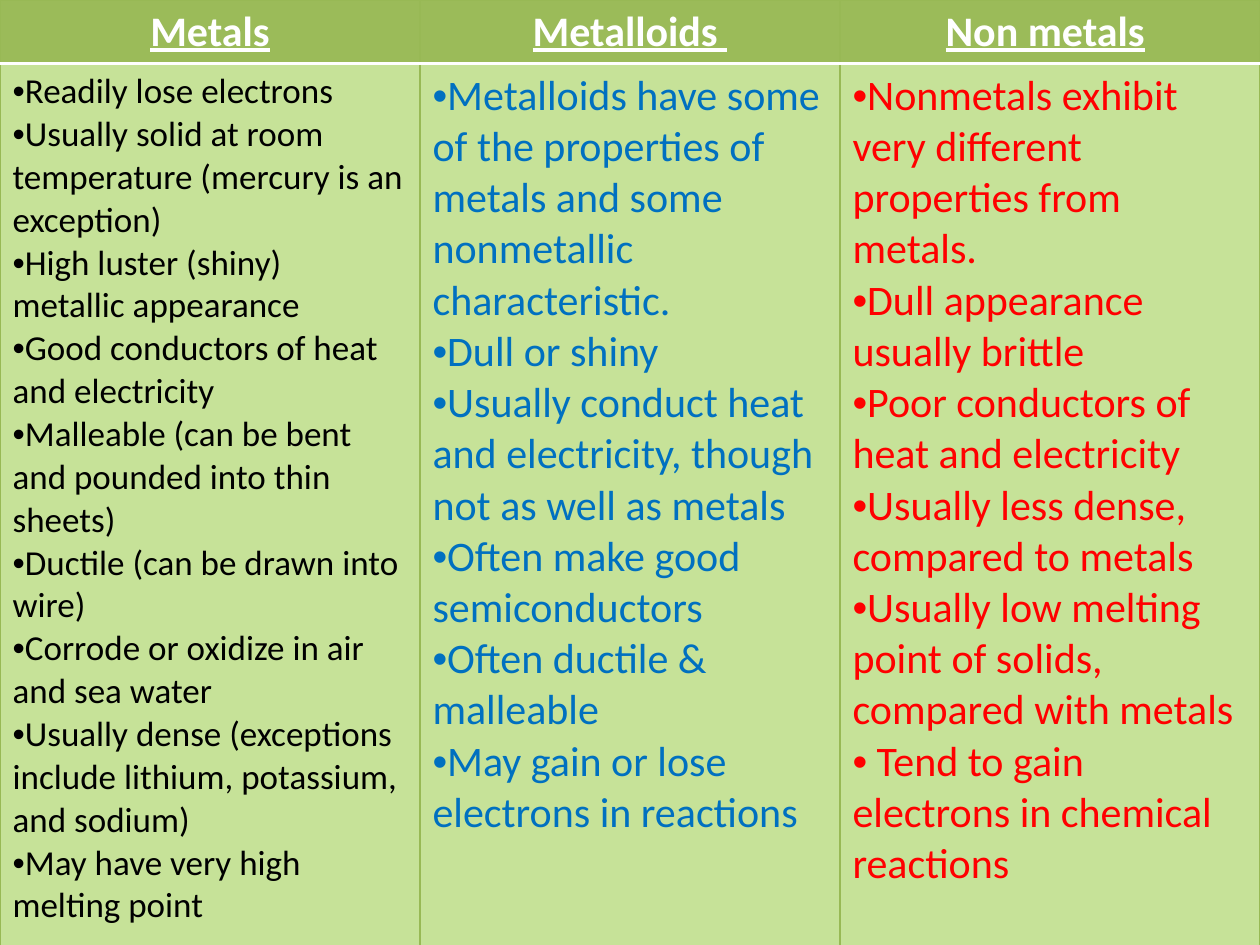
from dataclasses import dataclass

from lxml.etree import SubElement
from pptx import Presentation
from pptx.dml.color import RGBColor
from pptx.enum.text import PP_ALIGN as Align
from pptx.oxml.ns import qn
from pptx.util import Pt

FONT = "Calibri"
WHITE, GREEN, PALE_GREEN, EDGE = "FFFFFF", "9BBB59", "C6E298", "98B955"
PAGE_WIDTH, PAGE_HEIGHT = 720, 540
HEADER_HEIGHT, BODY_HEIGHT = 36.5, 530


@dataclass
class Category:
    title: str
    size: int
    color: str
    points: list[str]  # a line break starts a paragraph without a bullet
    title_tail: str = ""  # closing space that is not underlined


CATEGORIES = [
    Category("Metals", 20, "000000", [
        "Readily lose electrons",
        "Usually solid at room temperature (mercury is an exception)",
        "High luster (shiny)\nmetallic appearance",
        "Good conductors of heat and electricity",
        "Malleable (can be bent and pounded into thin sheets)",
        "Ductile (can be drawn into wire)",
        "Corrode or oxidize in air and sea water",
        "Usually dense (exceptions include lithium, potassium, and sodium)",
        "May have very high melting point",
    ]),
    Category("Metalloids ", 24, "0070C0", [
        "Metalloids have some of the properties of metals and some "
        "nonmetallic characteristic.",
        "Dull or shiny",
        "Usually conduct heat and electricity, though not as well as metals",
        "Often make good semiconductors",
        "Often ductile & malleable",
        "May gain or lose electrons in reactions",
    ]),
    Category("Non metals", 24, "FF0000", [
        "Nonmetals exhibit very different properties from metals.",
        "Dull appearance\nusually brittle",
        "Poor conductors of heat and electricity",
        "Usually less dense, compared to metals",
        "Usually low melting point of solids, compared with metals",
        " Tend to gain electrons in chemical reactions",
    ], title_tail=" "),
]


def rgb(color: str) -> RGBColor:
    return RGBColor.from_string(color)


def style_span(span, size: float, color: str, bold=False, underline=False) -> None:
    font = span.font
    font.name, font.size, font.color.rgb = FONT, Pt(size), rgb(color)
    font.bold, font.underline = bold, underline


def add_bullet(para) -> None:
    properties = para._p.get_or_add_pPr()
    properties.set("marL", "0")
    properties.set("indent", "0")
    SubElement(properties, qn("a:buFont"), typeface="Arial")
    SubElement(properties, qn("a:buChar"), char="•")


def style_cell(cell, fill: str, **white_sides: float) -> None:
    """Edge every side in green, except the named sides, white at that width."""
    properties = cell._tc.get_or_add_tcPr()
    for side in "LRTB":
        width = white_sides.get(side, 0.75)
        color = WHITE if side in white_sides else EDGE
        line = SubElement(properties, qn(f"a:ln{side}"), w=str(Pt(width)))
        SubElement(SubElement(line, qn("a:solidFill")), qn("a:srgbClr"), val=color)
    cell.fill.solid()
    cell.fill.fore_color.rgb = rgb(fill)


def fill_header(cell, category: Category) -> None:
    style_cell(cell, GREEN, B=2)
    para = cell.text_frame.paragraphs[0]
    para.text = category.title
    para.alignment = Align.CENTER
    style_span(para.runs[0], 24, WHITE, bold=True, underline=True)
    if category.title_tail:
        tail = para.add_run()
        tail.text = category.title_tail
        style_span(tail, 24, WHITE, bold=True)


def fill_body(cell, category: Category) -> None:
    style_cell(cell, PALE_GREEN, T=2)
    frame = cell.text_frame
    frame.text = "\n".join(category.points)
    bulleted = [place == 0 for point in category.points
                for place, _ in enumerate(point.split("\n"))]
    for para, has_bullet in zip(frame.paragraphs, bulleted):
        if has_bullet:
            add_bullet(para)
        style_span(para.runs[0], category.size, category.color)


def main() -> None:
    deck = Presentation()
    deck.slide_width, deck.slide_height = Pt(PAGE_WIDTH), Pt(PAGE_HEIGHT)
    page = deck.slides.add_slide(deck.slide_layouts[6])

    # Comparison table across the full page
    table = page.shapes.add_table(
        2, len(CATEGORIES), 0, 0, Pt(PAGE_WIDTH), Pt(HEADER_HEIGHT + BODY_HEIGHT)
    ).table
    table.horz_banding = False
    table.rows[0].height, table.rows[1].height = Pt(HEADER_HEIGHT), Pt(BODY_HEIGHT)

    # One column for each category
    for index, category in enumerate(CATEGORIES):
        table.columns[index].width = Pt(PAGE_WIDTH / len(CATEGORIES))
        fill_header(table.cell(0, index), category)
        fill_body(table.cell(1, index), category)

    deck.save("out.pptx")


if __name__ == "__main__":
    main()
